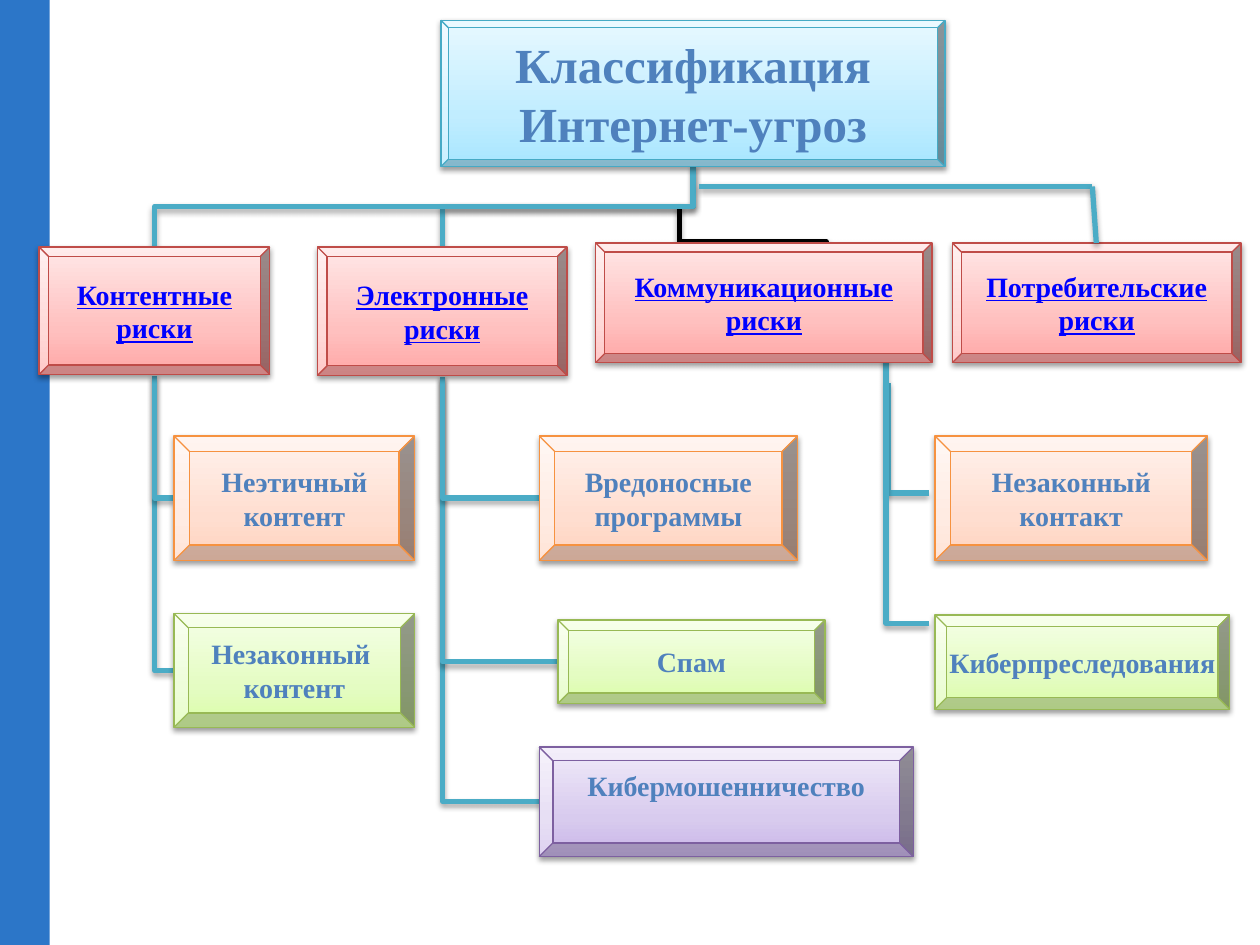
import copy
from lxml import etree
from pptx import Presentation
from pptx import util as u
from pptx.dml.color import RGBColor
from pptx.enum import shapes, text
from pptx.oxml import ns

BAR = RGBColor(0x2C, 0x76, 0xC8)
BRANCH = RGBColor(0x4B, 0xAC, 0xC6)
BLACK = RGBColor(0, 0, 0)
CAPTION = RGBColor(0x4F, 0x81, 0xBD)
LINKED = RGBColor(0, 0, 0xFF)


def palette(border, *stops):
    return RGBColor.from_string(border), [RGBColor.from_string(s) for s in stops]


SKY = palette("46AAC5", "A7E6FF", "C1EDFF", "E7F8FF")
RED = palette("BF4C48", "FFA6A5", "FFC0BF", "FFE7E7")
ORANGE = palette("F69240", "FFD2BD", "FFDED0", "FFF2ED")
GREEN = palette("98B955", "DAFDA7", "E4FCC2", "F5FFE7")
PURPLE = palette("7D60A0", "C9B5E8", "D8CBEE", "F0EAF9")


def write(frame, words, size=16, color=CAPTION, underline=None, gap=0, bottom=0):
    frame.word_wrap = True
    frame.vertical_anchor = text.MSO_ANCHOR.MIDDLE
    frame.margin_left = frame.margin_right = frame.margin_top = 0
    frame.margin_bottom = u.Cm(bottom)
    frame.text = words
    for paragraph in frame.paragraphs:
        paragraph.alignment = text.PP_ALIGN.CENTER
        paragraph.space_before = paragraph.space_after = u.Pt(gap)
        font = paragraph.runs[0].font
        font.name, font.size, font.bold = "Times New Roman", u.Pt(size), True
        font.underline = underline
        font.color.rgb = color


class Diagram:
    def __init__(self, slide):
        self.slide = slide

    def shadow(self, item, distance, opacity):
        props = item.element.spPr
        effects = props.find(ns.qn("a:effectLst"))
        if effects is None:
            effects = etree.SubElement(props, ns.qn("a:effectLst"))
        outer = etree.SubElement(effects, ns.qn("a:outerShdw"), blurRad="40000",
                                 dist=str(distance), dir="5400000", rotWithShape="0")
        tint = etree.SubElement(outer, ns.qn("a:srgbClr"), val="000000")
        etree.SubElement(tint, ns.qn("a:alpha"), val=str(opacity * 1000))

    def bar(self, left, top, width, height):
        bar = self.slide.shapes.add_shape(
            shapes.MSO_SHAPE.RECTANGLE, *map(u.Cm, (left, top, width, height)))
        bar.shadow.inherit = False
        bar.fill.solid()
        bar.fill.fore_color.rgb = BAR
        bar.line.fill.background()

    def box(self, words, place, colors, edge=0.125, **style):
        box = self.slide.shapes.add_shape(shapes.MSO_SHAPE.BEVEL, *map(u.Cm, place))
        box.adjustments[0] = edge
        border, tones = colors
        box.fill.gradient()
        box.fill.gradient_angle = 90
        stop_list = box.element.spPr.find(".//" + ns.qn("a:gsLst"))
        stop_list.insert(1, copy.deepcopy(stop_list[0]))
        for stop, tone, position in zip(box.fill.gradient_stops, tones, (0, 0.35, 1)):
            stop.color.rgb = tone
            stop.position = position
        box.line.color.rgb = border
        box.line.width = u.Pt(0.75)
        box.shadow.inherit = False
        self.shadow(box, 20000, 38)
        write(box.text_frame, words, **style)

    def line(self, start, end, kind=shapes.MSO_CONNECTOR.STRAIGHT, color=BRANCH):
        line = self.slide.shapes.add_connector(kind, *map(u.Cm, (*start, *end)))
        line.line.color.rgb = color
        line.line.width = u.Pt(3)
        self.shadow(line, 23000, 35)
        return line

    def corner(self, parent, child):
        elbow = self.line(parent, child, shapes.MSO_CONNECTOR.ELBOW)
        elbow.element.spPr.find(ns.qn("a:prstGeom")).set("prst", "bentConnector2")
        elbow.element.spPr.find(ns.qn("a:xfrm")).set("rot", "10800000")

    def step(self, upper, lower, color=BRANCH):
        (x1, y1), (x2, y2) = upper, lower
        middle_x, middle_y = (x1 + x2) / 2, (y1 + y2) / 2
        half_drop, half_shift = (y2 - y1) / 2, (x2 - x1) / 2
        elbow = self.line((middle_x - half_drop, middle_y + half_shift),
                          (middle_x + half_drop, middle_y - half_shift),
                          shapes.MSO_CONNECTOR.ELBOW, color)
        elbow.element.spPr.find(ns.qn("a:xfrm")).set("rot", "5400000")


def main():
    deck = Presentation()
    deck.slide_width, deck.slide_height = u.Cm(25.4), u.Cm(19.05)
    diagram = Diagram(deck.slides.add_slide(deck.slide_layouts[6]))

    diagram.bar(0, 0, 1, 19.05)
    diagram.step((13.7, 4.13), (16.65, 5.6), BLACK)
    content, electronic, contact = (3.12, 7.57), (8.92, 7.59), (17.91, 7.72)
    stalking = (17.86, 5.94)
    for parent, child in (
        (electronic, (10.87, 16.15)), (electronic, (11.25, 13.34)),
        (electronic, (10.87, 10.04)), (content, (3.51, 13.52)),
        (content, (3.51, 10.04)), (contact, (18.72, 9.94)),
        (stalking, (18.72, 12.57)),
    ):
        diagram.corner(parent, child)
    trunk = (13.97, 3.34)
    for branch in ((8.92, 4.98), (3.12, 4.98)):
        diagram.step(trunk, branch)

    diagram.box("Классификация Интернет-угроз", (8.89, 0.41, 10.16, 2.95), SKY,
                edge=0.05, size=28, gap=6)
    for words, place in (
        ("Контентные риски", (0.79, 4.98, 4.65, 2.57)),
        ("Электронные риски", (6.4, 4.98, 5.03, 2.59)),
        ("Коммуникационные риски", (12.01, 4.9, 6.78, 2.41)),
        ("Потребительские риски", (19.2, 4.9, 5.82, 2.41)),
    ):
        diagram.box(words, place, RED, edge=0.075, color=LINKED, underline=True)
    for words, left, width in (
        ("Неэтичный\nконтент", 3.51, 4.85),
        ("Вредоносные программы", 10.87, 5.21),
        ("Незаконный контакт", 18.85, 5.49),
    ):
        diagram.box(words, (left, 8.79, width, 2.51), ORANGE)
    for words, place in (
        ("Незаконный \nконтент", (3.51, 12.37, 4.85, 2.29)),
        ("Спам", (11.25, 12.5, 5.38, 1.68)),
        ("Киберпреследования", (18.85, 12.4, 5.94, 1.9)),
    ):
        diagram.box(words, place, GREEN)
    diagram.box("Кибермошенничество", (10.87, 15.06, 7.54, 2.21), PURPLE, bottom=0.65)

    bend = (22.02, 3.76)
    diagram.line((14.1, 3.76), bend)
    diagram.line(bend, (22.1, 4.9))
    deck.save("out.pptx")


if __name__ == "__main__":
    main()
